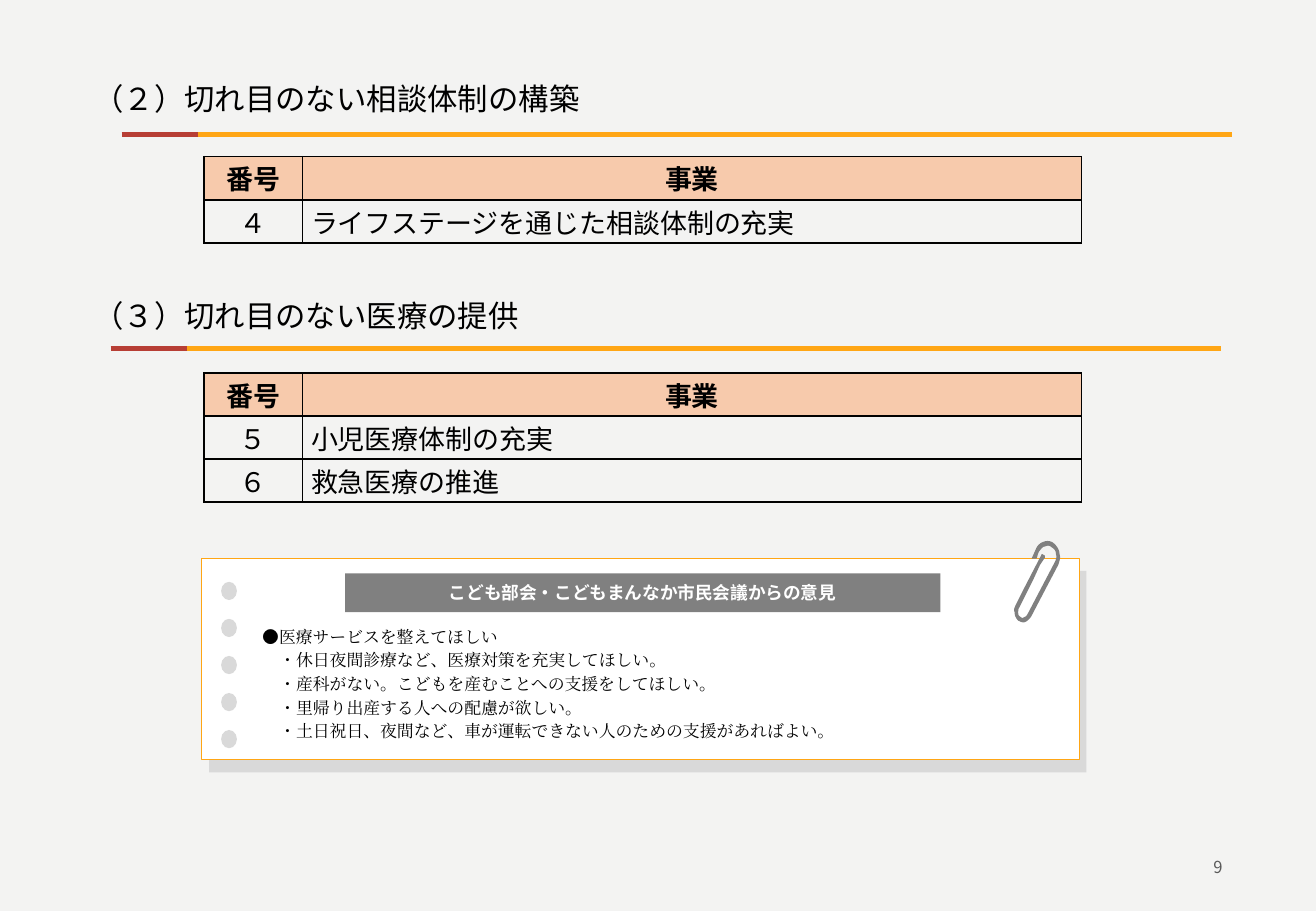
from dataclasses import dataclass

from lxml.etree import SubElement
from pptx import Presentation
from pptx.dml.color import RGBColor
from pptx.enum.shapes import MSO_CONNECTOR as Connector, MSO_SHAPE as Shape
from pptx.enum.text import MSO_ANCHOR as Anchor, PP_ALIGN as Align
from pptx.oxml.ns import qn
from pptx.util import Inches, Pt


@dataclass(frozen=True)
class Theme:
    """Colours, fonts and type sizes of the slide."""
    background: str = "F3F3F2"
    ink: str = "000000"
    white: str = "FFFFFF"
    orange: str = "FFA615"
    red: str = "B73E35"
    header: str = "F7CAAC"
    gray: str = "808080"
    pale: str = "D9D9D9"
    muted: str = "595959"
    body_font: str = "Noto Sans CJK JP"
    heading_font: str = "Arial"
    banner_font: str = "Calibri"
    note_font: str = "Cambria"
    heading_size: float = 18
    table_size: float = 16
    banner_size: float = 10.5
    note_size: float = 10
    number_size: float = 9.8


THEME = Theme()
OPINIONS = [
    "●医療サービスを整えてほしい",
    "・休日夜間診療など、医療対策を充実してほしい。",
    "・産科がない。こどもを産むことへの支援をしてほしい。",
    "・里帰り出産する人への配慮が欲しい。",
    "・土日祝日、夜間など、車が運転できない人のための支援があればよい。",
]
CLIP_START = (37, 11)
CLIP_SEGMENTS = [
    (37, 8, 35, 5, 33, 3), (30, 0, 27, 0, 24, 1), (21, 2, 19, 4, 18, 6),
    (14, 15), (18, 15),
    (19, 13, 19, 10, 21, 8), (22, 7, 23, 5, 25, 5), (27, 4, 29, 4, 31, 6),
    (33, 7, 34, 9, 34, 11), (35, 14, 34, 16, 33, 18),
    (22, 39), (11, 60),
    (10, 62, 9, 63, 8, 63), (7, 64, 6, 64, 5, 63), (3, 62, 3, 61, 3, 59),
    (3, 58, 3, 56, 4, 55),
    (12, 39), (15, 33), (21, 20), (25, 14),
    (25, 13, 25, 12, 24, 12), (23, 11, 22, 11, 22, 12),
    (8, 39), (1, 53),
    (0, 55, -1, 57, 0, 59), (0, 62, 1, 64, 3, 66), (5, 67, 7, 68, 9, 67),
    (11, 66, 13, 64, 14, 62),
    (26, 39), (36, 20),
    (37, 17, 38, 14, 37, 11),
]


def rgb(value):
    """Turn a hex string into a colour."""
    return RGBColor.from_string(value)


def style(paragraph, size, font, color=THEME.ink, bold=False, align=Align.LEFT):
    """Set the font and alignment of a whole paragraph."""
    paragraph.alignment = align
    paragraph.font.size = Pt(size)
    paragraph.font.name = font
    paragraph.font.bold = bold
    paragraph.font.color.rgb = rgb(color)
    properties = paragraph.font._element
    SubElement(properties, qn("a:ea"), typeface=font)


def add_text(shapes, box, lines, anchor=Anchor.TOP):
    """Add a wrapping text box and return its paragraphs."""
    frame = shapes.add_textbox(*map(Inches, box)).text_frame
    frame.word_wrap = True
    frame.vertical_anchor = anchor
    frame.text = "\n".join(lines)
    return frame.paragraphs


def add_block(shapes, kind, box, fill, line=None):
    """Add a flat filled shape."""
    shape = shapes.add_shape(kind, *map(Inches, box))
    paint(shape, fill, line)
    return shape


def paint(shape, fill, line=None):
    """Give a shape its fill and an optional thin line, without shadow."""
    shape.shadow.inherit = False
    shape.fill.solid()
    shape.fill.fore_color.rgb = rgb(fill)
    if line:
        shape.line.color.rgb = rgb(line)
        shape.line.width = Pt(0.5)
    else:
        shape.line.fill.background()


def add_heading(slide, top, text, rule_left, rule_top):
    """Add a section heading and its two-coloured rule."""
    paragraph, = add_text(slide.shapes, (0.52, top, 9.93, 0.4), [text], Anchor.MIDDLE)
    style(paragraph, THEME.heading_size, THEME.heading_font)
    paragraph._p.get_or_add_pPr().set("indent", str(Inches(0.15)))
    rule = slide.shapes.add_group_shape().shapes
    for start, end, color in ((0.02, 9.14, THEME.orange), (0, 0.63, THEME.red)):
        line = rule.add_connector(
            Connector.STRAIGHT, Inches(rule_left + start), Inches(rule_top),
            Inches(rule_left + end), Inches(rule_top))
        line.line.color.rgb = rgb(color)
        line.line.width = Pt(3)
        SubElement(line._element.spPr, qn("a:effectLst"))


def add_borders(cell):
    """Draw a thin line on all four sides of a cell."""
    properties = cell._tc.get_or_add_tcPr()
    for position, side in enumerate(("a:lnL", "a:lnR", "a:lnT", "a:lnB")):
        border = SubElement(properties, qn(side), w=str(Pt(1)))
        fill = SubElement(border, qn("a:solidFill"))
        SubElement(fill, qn("a:srgbClr"), val=THEME.ink)
        properties.insert(position, border)


def add_projects(slide, top, projects):
    """Add a table of numbered projects."""
    rows = [("番号", "事業"), *projects]
    height = 0.355
    table = slide.shapes.add_table(
        len(rows), 2, Inches(1.68), Inches(top), Inches(7.22),
        Inches(height * len(rows))).table
    table.horz_banding = False
    for column, width in zip(table.columns, (0.81, 6.41)):
        column.width = Inches(width)
    for row, values in enumerate(rows):
        for column, value in enumerate(values):
            cell = table.cell(row, column)
            cell.text = value
            cell.vertical_anchor = Anchor.MIDDLE
            cell.margin_left = cell.margin_right = Inches(0.07)
            cell.margin_top = cell.margin_bottom = 0
            if row == 0:
                cell.fill.solid()
                cell.fill.fore_color.rgb = rgb(THEME.header)
            else:
                cell.fill.background()
            centred = row == 0 or column == 0
            style(cell.text_frame.paragraphs[0], THEME.table_size, THEME.body_font,
                  bold=row == 0, align=Align.CENTER if centred else Align.LEFT)
            add_borders(cell)


def clip_points(steps=6):
    """Return the outline of the paper clip in hundredths of an inch."""
    points = [CLIP_START]
    for segment in CLIP_SEGMENTS:
        if len(segment) == 2:
            points.append(segment)
            continue
        x0, y0 = points[-1]
        x1, y1, x2, y2, x3, y3 = segment
        for step in range(1, steps + 1):
            t = step / steps
            a, b, c, d = (1 - t) ** 3, 3 * t * (1 - t) ** 2, 3 * t * t * (1 - t), t ** 3
            points.append((a * x0 + b * x1 + c * x2 + d * x3,
                           a * y0 + b * y1 + c * y2 + d * y3))
    return points


def add_clip(shapes, left, top):
    """Add the paper clip."""
    points = [(Inches(left + x / 100), Inches(top + y / 100)) for x, y in clip_points()]
    builder = shapes.build_freeform(*points[0])
    builder.add_line_segments(points[1:], close=True)
    paint(builder.convert_to_shape(), THEME.gray)


def add_note(slide, left, top, width, height):
    """Add the clipped note card with its opinions."""
    shapes = slide.shapes.add_group_shape().shapes
    add_block(shapes, Shape.RECTANGLE, (left + 0.06, top + 0.1, width, height + 0.01), THEME.pale)
    add_block(shapes, Shape.RECTANGLE, (left, top, width, height), THEME.white, THEME.orange)
    banner = add_block(shapes, Shape.RECTANGLE, (left + 1.18, top + 0.12, 4.9, 0.32), THEME.gray)
    frame = banner.text_frame
    frame.margin_left = frame.margin_right = frame.margin_top = frame.margin_bottom = 0
    frame.vertical_anchor = Anchor.MIDDLE
    frame.text = "こども部会・こどもまんなか市民会議からの意見"
    style(frame.paragraphs[0], THEME.banner_size, THEME.banner_font, THEME.white, True, Align.CENTER)
    add_clip(shapes, left + 6.69, top - 0.15)
    for hole in range(5):
        add_block(shapes, Shape.OVAL, (left + 0.16, top + 0.19 + 0.305 * hole, 0.13, 0.15), THEME.pale)
    paragraphs = add_text(shapes, (left + 0.4, top + 0.48, 5.54, 1.28), OPINIONS)
    for index, paragraph in enumerate(paragraphs):
        style(paragraph, THEME.note_size, THEME.note_font, align=Align.JUSTIFY)
        paragraph.line_spacing = Pt(14)
        if index:
            paragraph._p.get_or_add_pPr().set("indent", str(Inches(0.14)))


def add_page_number(slide, number):
    """Add the page number at the lower right."""
    paragraph, = add_text(slide.shapes, (7.65, 6.98, 2.51, 0.31), [number], Anchor.MIDDLE)
    style(paragraph, THEME.number_size, THEME.body_font, THEME.muted, align=Align.RIGHT)


def main():
    """Build and save the slide."""
    presentation = Presentation()
    presentation.slide_width, presentation.slide_height = Inches(10.83), Inches(7.5)
    slide = presentation.slides.add_slide(presentation.slide_layouts[6])
    slide.background.fill.solid()
    slide.background.fill.fore_color.rgb = rgb(THEME.background)
    add_heading(slide, 0.61, "（２）切れ目のない相談体制の構築", 1, 1.11)
    add_projects(slide, 1.29, [("４", "ライフステージを通じた相談体制の充実")])
    add_heading(slide, 2.4, "（３）切れ目のない医療の提供", 0.91, 2.87)
    add_projects(slide, 3.07, [("５", "小児医療体制の充実"), ("６", "救急医療の推進")])
    add_note(slide, 1.66, 4.6, 7.22, 1.65)
    add_page_number(slide, "9")


    presentation.save("out.pptx")


if __name__ == "__main__":
    main()
